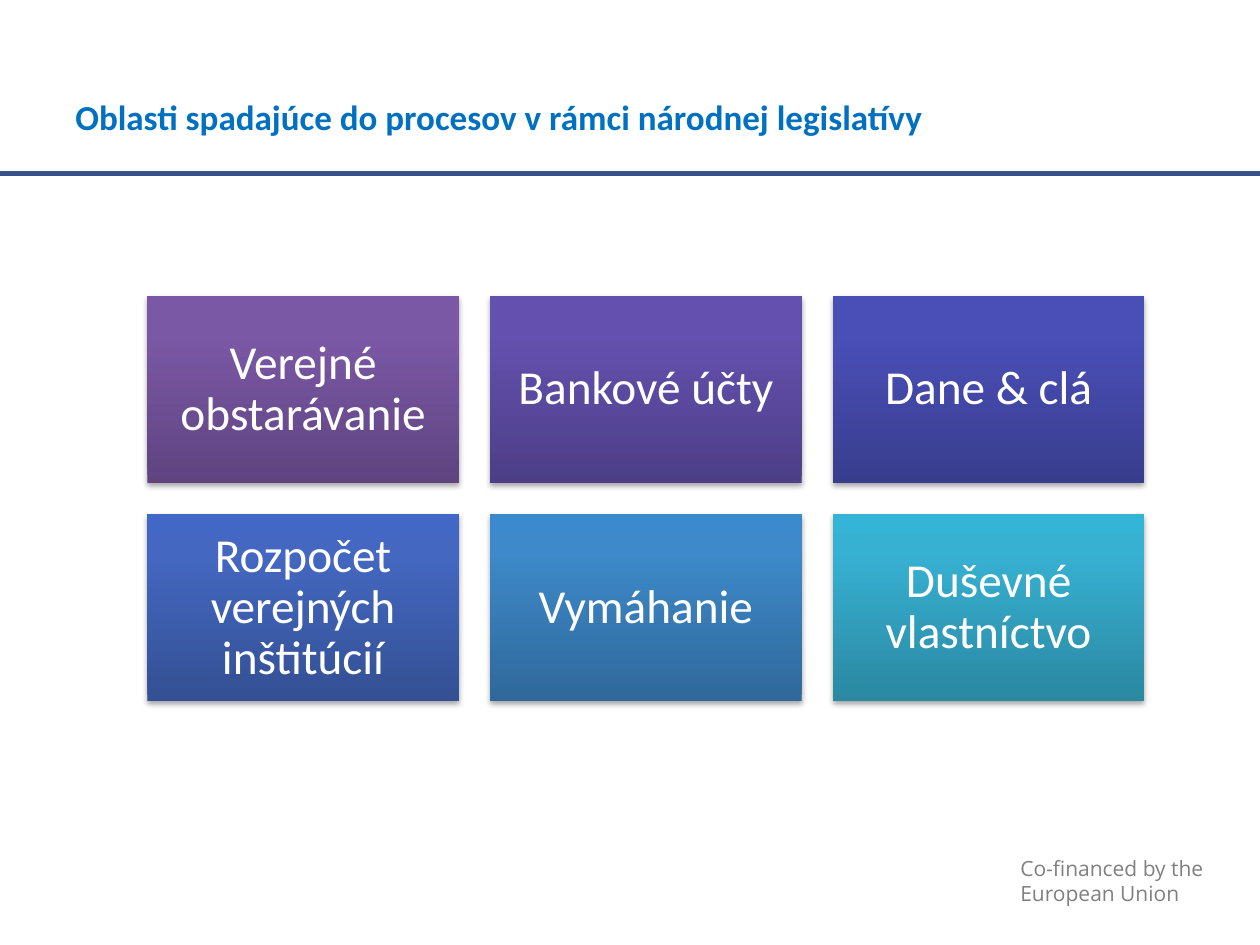
import copy

import pptx
import pptx.dml.color
import pptx.enum.shapes
import pptx.enum.text
import pptx.oxml
import pptx.oxml.ns
import pptx.util

Cm = pptx.util.Cm
Pt = pptx.util.Pt
qn = pptx.oxml.ns.qn
Align = pptx.enum.text.PP_ALIGN
Anchor = pptx.enum.text.MSO_ANCHOR

SHADOW = (
    f'<a:outerShdw {pptx.oxml.ns.nsdecls("a")} blurRad="40000" dist="23000" '
    'dir="5400000" rotWithShape="0"><a:srgbClr val="000000">'
    '<a:alpha val="35000"/></a:srgbClr></a:outerShdw>'
)

AREAS = [
    ("Verejné obstarávanie", ("5F4480", "7B58A6", "7C57A8")),
    ("Bankové účty", ("4D3E87", "6451AF", "6450B2")),
    ("Dane & clá", ("393D8E", "4A4FB8", "484EBB")),
    ("Rozpočet verejných inštitúcií", ("345094", "4468C1", "4168C4")),
    ("Vymáhanie", ("2F699B", "3D89C9", "3B8ACD")),
    ("Duševné vlastníctvo", ("2A88A2", "37B1D2", "34B4D6")),
]


def color(value):
    return pptx.dml.color.RGBColor.from_string(value)


def apply(target, values):
    for name, value in values.items():
        setattr(target, name, value)


class SlideBuilder:
    title_font = {"name": "Calibri", "size": Pt(20), "bold": True}
    tile_font = {"name": "Calibri", "size": Pt(27)}
    footer_font = {"name": "Open Sans", "size": Pt(12)}
    tile_frame = {
        "word_wrap": True,
        "vertical_anchor": Anchor.MIDDLE,
        **{f"margin_{side}": Cm(0.28) for side in ("left", "top", "right", "bottom")},
    }
    tile_paragraph = {"alignment": Align.CENTER, "line_spacing": 0.9}
    stop_positions = (0, 0.8, 1)

    def __init__(self, deck):
        self.page = deck.slides.add_slide(deck.slide_layouts[6])

    def add_lines(self, frame, lines, font, ink, layout):
        for index, line in enumerate(lines):
            para = frame.paragraphs[0] if index == 0 else frame.add_paragraph()
            apply(para, layout)
            span = para.add_run()
            span.text = line
            apply(span.font, font)
            span.font.color.rgb = color(ink)

    def text(self, area, lines, font, ink, anchor):
        box = self.page.shapes.add_textbox(*map(Cm, area))
        apply(box.text_frame, {"word_wrap": True, "vertical_anchor": anchor})
        self.add_lines(box.text_frame, lines, font, ink, {"alignment": Align.LEFT})

    def rule(self, top, width, ink):
        line = self.page.shapes.add_connector(
            pptx.enum.shapes.MSO_CONNECTOR.STRAIGHT, 0, Cm(top), Cm(width), Cm(top)
        )
        line.line.color.rgb = color(ink)
        line.line.width = Pt(3)
        properties = line._element.spPr
        properties.append(properties.makeelement(qn("a:effectLst"), {}))

    def tile(self, area, label, shades):
        box = self.page.shapes.add_shape(
            pptx.enum.shapes.MSO_SHAPE.RECTANGLE, *map(Cm, area)
        )
        box.line.fill.background()
        self.gradient(box, shades)
        box.shadow.inherit = False
        effects = box._element.spPr.find(qn("a:effectLst"))
        effects.append(pptx.oxml.parse_xml(SHADOW))
        apply(box.text_frame, self.tile_frame)
        self.add_lines(
            box.text_frame, [label], self.tile_font, "FFFFFF", self.tile_paragraph
        )

    def gradient(self, box, shades):
        box.fill.gradient()
        box.fill.gradient_angle = 90
        stops = box._element.spPr.find(qn("a:gradFill")).find(qn("a:gsLst"))
        stops.append(copy.deepcopy(stops[-1]))
        for stop, position, shade in zip(
            box.fill.gradient_stops, self.stop_positions, shades
        ):
            stop.position = position
            stop.color.rgb = color(shade)


def main():
    deck = pptx.Presentation()
    apply(deck, {"slide_width": Cm(25.4), "slide_height": Cm(19.05)})
    builder = SlideBuilder(deck)
    builder.rule(3.5, 25.4, "37518A")
    builder.text(
        (20.32, 17.12, 4.37, 1.27),
        ["Co-financed by the", "European Union"],
        builder.footer_font,
        "808080",
        Anchor.TOP,
    )
    builder.text(
        (1.27, 0.76, 18.03, 3.18),
        ["Oblasti spadajúce do procesov v rámci národnej legislatívy"],
        builder.title_font,
        "0070C0",
        Anchor.MIDDLE,
    )
    left, top, width, height, gap = 2.97, 5.97, 6.28, 3.77, 0.63
    for index, (label, shades) in enumerate(AREAS):
        row, column = divmod(index, 3)
        area = (left + column * (width + gap), top + row * (height + gap), width, height)
        builder.tile(area, label, shades)
    deck.save("out.pptx")


if __name__ == "__main__":
    main()
